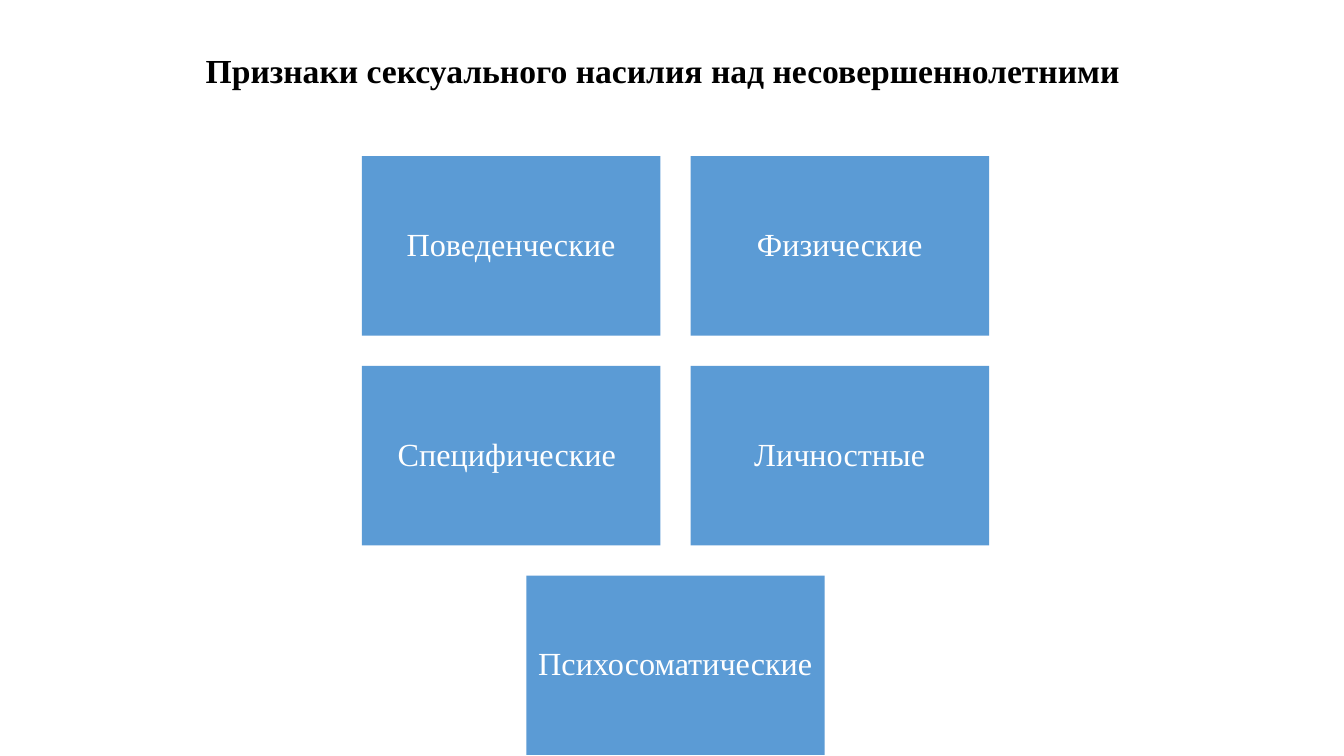
from dataclasses import dataclass

from pptx import Presentation
from pptx.dml.color import RGBColor
from pptx.enum.shapes import MSO_SHAPE as Preset
from pptx.enum.text import MSO_ANCHOR as Anchor, MSO_AUTO_SIZE as AutoSize, PP_ALIGN as Align
from pptx.util import Inches, Pt


@dataclass(frozen=True)
class Theme:
    font: str = "Times New Roman"
    title_size: float = 24
    card_size: float = 23
    title_color: str = "000000"
    card_color: str = "5B9BD5"
    card_text: str = "FFFFFF"


@dataclass(frozen=True)
class Grid:
    left: float = 3.59
    top: float = 1.55
    width: float = 2.96
    height: float = 1.78
    gap: float = 0.3

    def cell(self, column, row):
        return (Inches(self.left + column * (self.width + self.gap)),
                Inches(self.top + row * (self.height + self.gap)),
                Inches(self.width), Inches(self.height))


class SlideBuilder:
    """Place titles and grid cards on one slide in a shared theme."""

    def __init__(self, slide, theme, grid):
        self.slide, self.theme, self.grid = slide, theme, grid

    def style_text(self, shape, text, size, color, align, bold=False):
        text_frame = shape.text_frame
        text_frame.text = text
        text_frame.word_wrap = True
        text_frame.vertical_anchor = Anchor.MIDDLE
        paragraph = text_frame.paragraphs[0]
        paragraph.alignment = align
        font = paragraph.runs[0].font
        font.name, font.size, font.bold = self.theme.font, Pt(size), bold
        font.color.rgb = RGBColor.from_string(color)
        return text_frame

    def title(self, text, left, top, width, height):
        shape = self.slide.shapes.title
        shape.left, shape.top = Inches(left), Inches(top)
        shape.width, shape.height = Inches(width), Inches(height)
        text_frame = self.style_text(shape, text, self.theme.title_size,
                                     self.theme.title_color, Align.LEFT, bold=True)
        text_frame.auto_size = AutoSize.NONE

    def card(self, text, column, row):
        shape = self.slide.shapes.add_shape(Preset.RECTANGLE, *self.grid.cell(column, row))
        shape.shadow.inherit = False
        shape.fill.solid()
        shape.fill.fore_color.rgb = RGBColor.from_string(self.theme.card_color)
        shape.line.fill.background()
        text_frame = self.style_text(shape, text, self.theme.card_size,
                                     self.theme.card_text, Align.CENTER)
        text_frame.margin_left = text_frame.margin_right = Inches(0.1)
        text_frame.margin_top = text_frame.margin_bottom = Inches(0.1)
        text_frame.paragraphs[0].line_spacing = 0.9


def main():
    presentation = Presentation()
    presentation.slide_width, presentation.slide_height = Inches(13.33), Inches(7.5)
    slide = presentation.slides.add_slide(presentation.slide_layouts[5])
    builder = SlideBuilder(slide, Theme(), Grid())

    builder.title("Признаки сексуального насилия над несовершеннолетними",
                  1.94, 0.44, 9.29, 0.5)
    rows = [("Поведенческие", "Физические"),
            ("Специфические ", "Личностные"),
            ("Психосоматические",)]
    for row, signs in enumerate(rows):
        first_column = (2 - len(signs)) / 2
        for index, sign in enumerate(signs):
            builder.card(sign, first_column + index, row)

    presentation.save("out.pptx")


if __name__ == "__main__":
    main()
